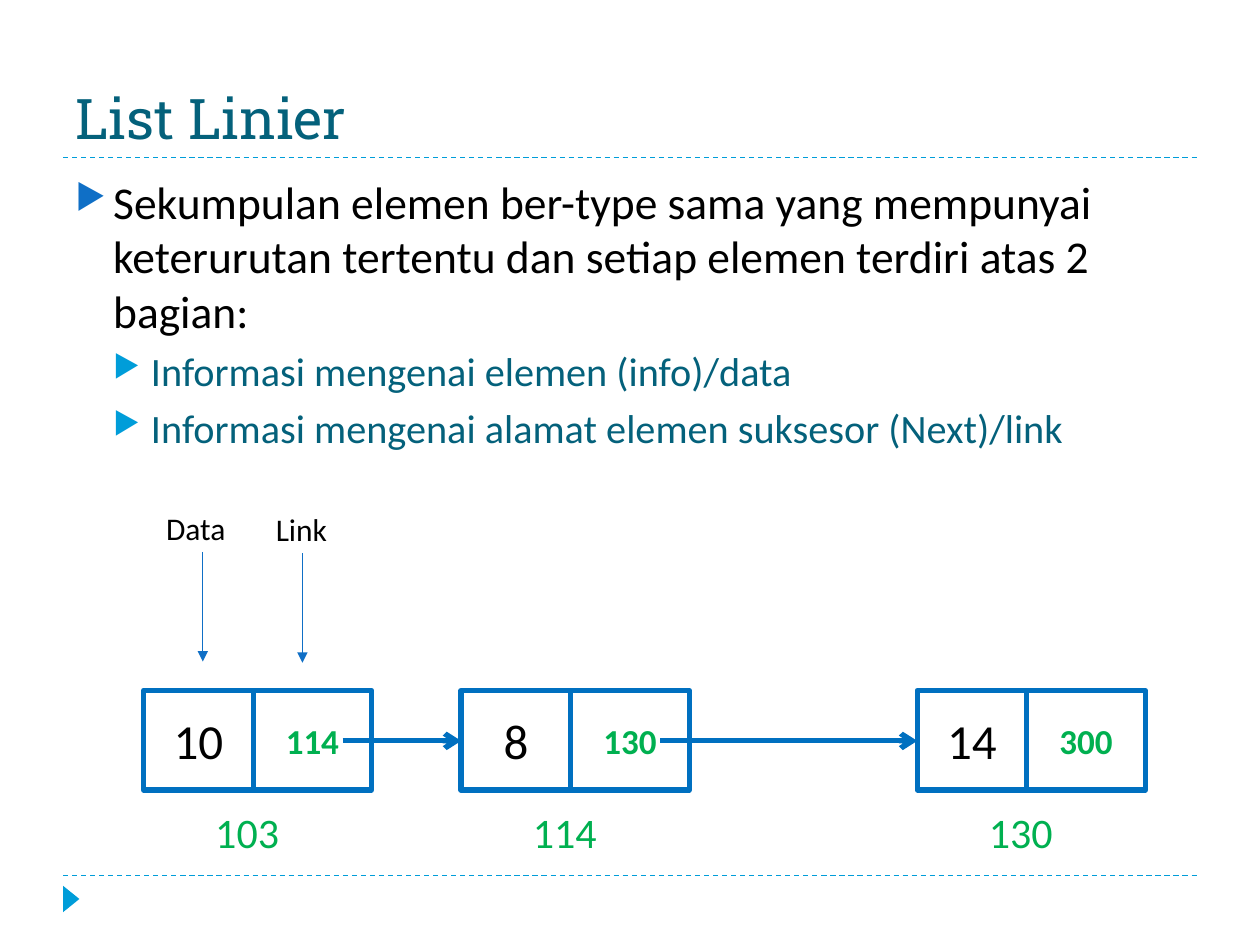
from dataclasses import dataclass

from lxml.etree import SubElement
from pptx import Presentation
from pptx.dml.color import RGBColor
from pptx.enum.dml import MSO_LINE
from pptx.enum.shapes import MSO_CONNECTOR, MSO_SHAPE
from pptx.enum.text import MSO_ANCHOR, MSO_AUTO_SIZE, PP_ALIGN
from pptx.oxml.ns import qn
from pptx.util import Inches, Pt


@dataclass(frozen=True)
class Theme:
    teal: str = "04617B"
    sky: str = "009DD9"
    blue: str = "0F6FC6"
    node_blue: str = "0070C0"
    green: str = "00B050"
    black: str = "000000"
    title_font: str = "Roboto Slab"
    body_font: str = "Calibri"
    title_size: int = 32
    point_size: int = 26
    subpoint_size: int = 23
    value_size: int = 28
    link_size: int = 20
    address_size: int = 24
    caption_size: int = 18
    thin: float = 0.75
    thick: float = 3


THEME = Theme()

# Node geometry: a data cell and a link cell side by side
NODE_TOP, NODE_HEIGHT = 5.48, 0.79
DATA_WIDTH, LINK_WIDTH = 0.87, 0.94
POINTER_OFFSET, POINTER_Y = 1.58, 5.88
ADDRESS_OFFSET, ADDRESS_TOP = 0.47, 6.35

# Left edge, value, address of successor, own address
NODES = [
    (1.14, "10", "114", "103"),
    (3.66, "8", "130", "114"),
    (7.28, "14", "300", "130"),
]

# Caption, left, top, arrow x
CAPTIONS = [("Data", 1.22, 3.99, 1.61), ("Link", 2.09, 4.0, 2.4)]

# Text, level, size, text colour, bullet colour, space before
POINTS = [
    ("Sekumpulan elemen ber-type sama yang mempunyai keterurutan tertentu "
     "dan setiap elemen terdiri atas 2 bagian:",
     0, THEME.point_size, THEME.black, THEME.blue, 6),
    ("Informasi mengenai elemen (info)/data",
     1, THEME.subpoint_size, THEME.teal, THEME.sky, 5),
    ("Informasi mengenai alamat elemen suksesor (Next)/link",
     1, THEME.subpoint_size, THEME.teal, THEME.sky, 5),
]


def set_all(target, values):
    for name, value in values.items():
        setattr(target, name, value)


def place(item, left, top, width, height):
    set_all(item, {"left": Inches(left), "top": Inches(top),
                   "width": Inches(width), "height": Inches(height)})


def write(paragraph, text, size, colour, font=THEME.body_font, bold=False):
    run = paragraph.add_run()
    run.text = text
    set_all(run.font, {"name": font, "size": Pt(size), "bold": bold})
    run.font.color.rgb = RGBColor.from_string(colour)


def add_title(slide, text):
    title = slide.shapes.title
    place(title, 0.5, 0.17, 9, 1.08)
    set_all(title.text_frame, {"vertical_anchor": MSO_ANCHOR.BOTTOM,
                               "auto_size": MSO_AUTO_SIZE.NONE})
    heading = title.text_frame.paragraphs[0]
    heading.alignment = PP_ALIGN.LEFT
    write(heading, text, THEME.title_size, THEME.teal, THEME.title_font)


def add_bullet(paragraph, level, colour):
    properties = paragraph._p.get_or_add_pPr()
    properties.set("marL", str(Inches(0.3 * (level + 1))))
    properties.set("indent", str(Inches(-0.3)))
    bullet_colour = SubElement(properties, qn("a:buClr"))
    SubElement(bullet_colour, qn("a:srgbClr"), val=colour)
    SubElement(properties, qn("a:buSzPct"), val="76000")
    SubElement(properties, qn("a:buChar"), char="▶")


def add_points(slide):
    body = slide.shapes.add_textbox(Inches(0.5), Inches(1.33), Inches(9), Inches(5.4))
    frame = body.text_frame
    frame.word_wrap = True
    for index, (text, level, size, colour, bullet, before) in enumerate(POINTS):
        point = frame.add_paragraph() if index else frame.paragraphs[0]
        set_all(point, {"level": level, "space_before": Pt(before)})
        add_bullet(point, level, bullet)
        write(point, text, size, colour)


def add_label(slide, text, left, top, width, height, size, colour, wrap):
    label = slide.shapes.add_textbox(Inches(left), Inches(top), Inches(width), Inches(height))
    set_all(label.text_frame, {"word_wrap": wrap,
                               "auto_size": MSO_AUTO_SIZE.SHAPE_TO_FIT_TEXT})
    write(label.text_frame.paragraphs[0], text, size, colour)


def add_line(slide, start, end, colour, width, dash=None, head=None):
    line = slide.shapes.add_connector(
        MSO_CONNECTOR.STRAIGHT, *(Inches(value) for value in (*start, *end)))
    line.line.color.rgb = RGBColor.from_string(colour)
    set_all(line.line, {"width": Pt(width), "dash_style": dash})
    if head:
        SubElement(line.line._get_or_add_ln(), qn("a:tailEnd"), type=head)
    SubElement(line._element.spPr, qn("a:effectLst"))


def add_cell(slide, text, left, width, size, colour, bold):
    cell = slide.shapes.add_shape(
        MSO_SHAPE.RECTANGLE, Inches(left), Inches(NODE_TOP), Inches(width), Inches(NODE_HEIGHT))
    cell.shadow.inherit = False
    cell.fill.background()
    cell.line.color.rgb = RGBColor.from_string(THEME.node_blue)
    cell.line.width = Pt(THEME.thick)
    cell.text_frame.vertical_anchor = MSO_ANCHOR.MIDDLE
    content = cell.text_frame.paragraphs[0]
    content.alignment = PP_ALIGN.CENTER
    write(content, text, size, colour, bold=bold)


def add_node(slide, left, value, successor, address):
    add_label(slide, address, left + ADDRESS_OFFSET, ADDRESS_TOP, 0.71, 0.5,
              THEME.address_size, THEME.green, wrap=False)
    add_cell(slide, value, left, DATA_WIDTH, THEME.value_size, THEME.black, False)
    add_cell(slide, successor, left + DATA_WIDTH, LINK_WIDTH,
             THEME.link_size, THEME.green, True)


def add_corner_marker(slide):
    marker = slide.shapes.add_shape(
        MSO_SHAPE.ISOSCELES_TRIANGLE, Inches(0.46), Inches(7.07), Inches(0.21), Inches(0.13))
    marker.rotation = 90
    marker.shadow.inherit = False
    marker.fill.solid()
    marker.fill.fore_color.rgb = RGBColor.from_string(THEME.sky)
    marker.line.fill.background()


def main():
    deck = Presentation()
    set_all(deck, {"slide_width": Inches(10), "slide_height": Inches(7.5)})
    slide = deck.slides.add_slide(deck.slide_layouts[5])

    # Page rules and corner marker
    for y in (6.95, 1.25):
        add_line(slide, (0.5, y), (9.5, y), THEME.sky, THEME.thin, dash=MSO_LINE.DASH)
    add_corner_marker(slide)

    # Title and definition
    add_title(slide, "List Linier")
    add_points(slide)

    # Linked nodes
    for node in NODES:
        add_node(slide, *node)
    for (left, *_), (next_left, *_) in zip(NODES, NODES[1:]):
        add_line(slide, (left + POINTER_OFFSET, POINTER_Y), (next_left, POINTER_Y),
                 THEME.node_blue, THEME.thick, head="arrow")

    # Captions pointing at the parts of the first node
    for caption, left, top, arrow_x in CAPTIONS:
        add_line(slide, (arrow_x, top + 0.39), (arrow_x, top + 1.26),
                 THEME.blue, THEME.thin, head="triangle")
        add_label(slide, caption, left, top, 0.79, 0.4,
                  THEME.caption_size, THEME.black, wrap=True)

    deck.save("out.pptx")


if __name__ == "__main__":
    main()
